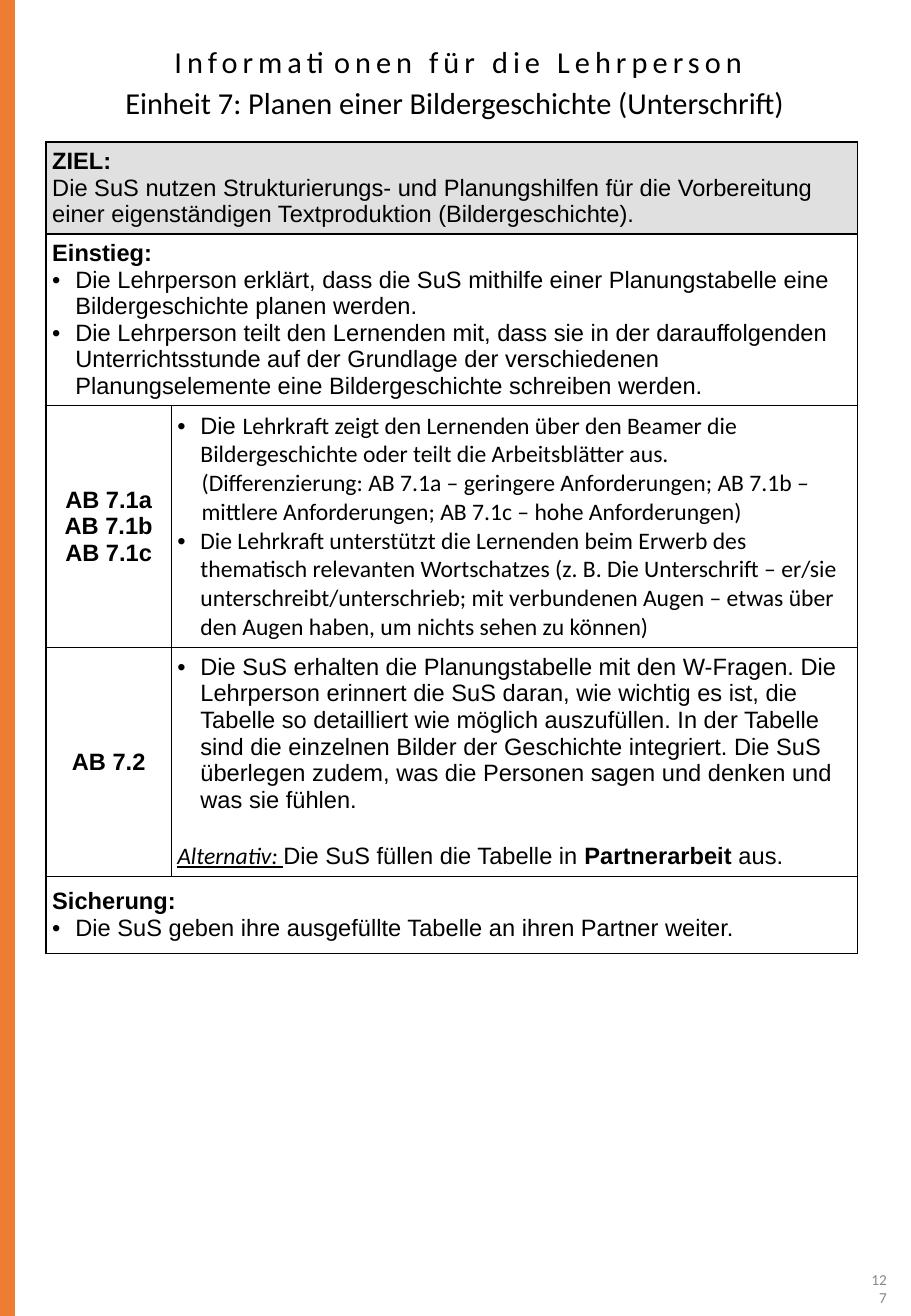
from lxml.etree import SubElement
from pptx import Presentation
from pptx.dml.color import RGBColor
from pptx.enum.text import MSO_ANCHOR as Anchor, PP_ALIGN as Align
from pptx.oxml.ns import qn
from pptx.util import Inches, Pt

BLACK = RGBColor(0x00, 0x00, 0x00)
WHITE = RGBColor(0xFF, 0xFF, 0xFF)
GOAL_GREY = RGBColor(0xE0, 0xE0, 0xE0)
NUMBER_GREY = RGBColor(0x88, 0x88, 0x88)
ORANGE = RGBColor(0xED, 0x7D, 0x31)
INSET = Inches(0.05)

prs = Presentation()
prs.slide_width, prs.slide_height = Inches(7.5), Inches(10.83)
slide = prs.slides.add_slide(prs.slide_layouts[6])


def add_label(text, left, top, width, height, size, color, align):
    frame = slide.shapes.add_textbox(
        Inches(left), Inches(top), Inches(width), Inches(height)).text_frame
    frame.word_wrap = True
    frame.margin_left = frame.margin_right = INSET
    frame.margin_top = frame.margin_bottom = INSET
    paragraph = frame.paragraphs[0]
    paragraph.text = text
    paragraph.alignment = align
    paragraph.font.name = "Calibri"
    paragraph.font.size = Pt(size)
    paragraph.font.color.rgb = color
    return frame


def fill_cell(cell, items, color=WHITE):
    """Each item is (kind, text, font); a text may be a list of (text, run font)."""
    cell.fill.solid()
    cell.fill.fore_color.rgb = color
    cell.vertical_anchor = Anchor.MIDDLE
    cell.margin_left = cell.margin_right = INSET
    cell.margin_top = cell.margin_bottom = INSET
    frame = cell.text_frame
    for number, (kind, text, font_name) in enumerate(items):
        paragraph = frame.add_paragraph() if number else frame.paragraphs[0]
        paragraph.font.name = font_name
        paragraph.font.size = Pt(14)
        paragraph.font.color.rgb = BLACK
        paragraph.font.bold = kind in ("heading", "sheet")
        if kind == "sheet":
            paragraph.alignment = Align.CENTER
        pPr = paragraph._p.get_or_add_pPr()
        if kind == "bullet":
            pPr.set("marL", str(Inches(0.19)))
            pPr.set("indent", str(-Inches(0.19)))
            bullet_font = pPr.makeelement(qn("a:buFont"), {"typeface": "Arial"})
            bullet_char = pPr.makeelement(qn("a:buChar"), {"char": "•"})
            pPr.insert(0, bullet_font)
            pPr.insert(1, bullet_char)
        elif kind == "indented":
            pPr.set("marL", str(Inches(0.2)))
        elif kind == "spaced":
            paragraph.space_before = Pt(17)
        parts = [(text, {})] if isinstance(text, str) else text
        for part, style in parts:
            run = paragraph.add_run()
            run.text = part
            for attribute, value in style.items():
                setattr(run.font, attribute, value)


# Lesson table
row_heights = [0.75, 1.41, 1.99, 1.88, 0.63]
lesson = slide.shapes.add_table(
    len(row_heights), 2, Inches(0.38), Inches(1.17),
    Inches(6.68), Inches(sum(row_heights))).table
lesson.first_row = lesson.horz_banding = False
for column, width in zip(lesson.columns, [1.03, 5.65]):
    column.width = Inches(width)
for row, height in zip(lesson.rows, row_heights):
    row.height = Inches(height)
for full_width_row in (0, 1, 4):
    lesson.cell(full_width_row, 0).merge(lesson.cell(full_width_row, 1))

# Cell borders
for cell in lesson.iter_cells():
    tcPr = cell._tc.get_or_add_tcPr()
    for side in ("a:lnL", "a:lnR", "a:lnT", "a:lnB"):
        border = SubElement(tcPr, qn(side), w=str(Pt(1)))
        border_fill = SubElement(border, qn("a:solidFill"))
        SubElement(border_fill, qn("a:srgbClr"), val=str(BLACK))

# Goal
fill_cell(lesson.cell(0, 0), [
    ("heading", "ZIEL:", "Arial"),
    ("plain", "Die SuS nutzen Strukturierungs- und Planungshilfen für die "
     "Vorbereitung einer eigenständigen Textproduktion (Bildergeschichte).", "Arial"),
], GOAL_GREY)

# Introduction
fill_cell(lesson.cell(1, 0), [
    ("heading", "Einstieg:", "Arial"),
    ("bullet", "Die Lehrperson erklärt, dass die SuS mithilfe einer "
     "Planungstabelle eine Bildergeschichte planen werden.", "Arial"),
    ("bullet", "Die Lehrperson teilt den Lernenden mit, dass sie in der "
     "darauffolgenden Unterrichtsstunde auf der Grundlage der verschiedenen "
     "Planungselemente eine Bildergeschichte schreiben werden.", "Arial"),
])

# Worksheets 7.1
fill_cell(lesson.cell(2, 0), [
    ("sheet", f"AB 7.1{version}", "Arial") for version in "abc"])
fill_cell(lesson.cell(2, 1), [
    ("bullet", [
        ("Die ", {"name": "Arial"}),
        ("Lehrkraft zeigt den Lernenden über den Beamer die "
         "Bildergeschichte oder teilt die Arbeitsblätter aus.", {}),
    ], "Calibri"),
    ("indented", "(Differenzierung: AB 7.1a – geringere Anforderungen; "
     "AB 7.1b – mittlere Anforderungen; AB 7.1c – hohe Anforderungen)", "Calibri"),
    ("bullet", "Die Lehrkraft unterstützt die Lernenden beim Erwerb des "
     "thematisch relevanten Wortschatzes (z. B. Die Unterschrift – er/sie "
     "unterschreibt/unterschrieb; mit verbundenen Augen – etwas über den "
     "Augen haben, um nichts sehen zu können)", "Calibri"),
])

# Worksheet 7.2
fill_cell(lesson.cell(3, 0), [("sheet", "AB 7.2", "Arial")])
fill_cell(lesson.cell(3, 1), [
    ("bullet", "Die SuS erhalten die Planungstabelle mit den W-Fragen. Die "
     "Lehrperson erinnert die SuS daran, wie wichtig es ist, die Tabelle so "
     "detailliert wie möglich auszufüllen. In der Tabelle sind die einzelnen "
     "Bilder der Geschichte integriert. Die SuS überlegen zudem, was die "
     "Personen sagen und denken und was sie fühlen.", "Arial"),
    ("spaced", [
        ("Alternativ: ", {"name": "Calibri", "italic": True, "underline": True}),
        ("Die SuS füllen die Tabelle in ", {}),
        ("Partnerarbeit", {"bold": True}),
        (" aus.", {}),
    ], "Arial"),
])

# Consolidation
fill_cell(lesson.cell(4, 0), [
    ("heading", "Sicherung:", "Arial"),
    ("bullet", "Die SuS geben ihre ausgefüllte Tabelle an ihren Partner weiter.",
     "Arial"),
])

# Titles
add_label("Einheit 7: Planen einer Bildergeschichte (Unterschrift)",
          0.14, 0.64, 7.21, 0.4, 18, BLACK, Align.CENTER)
heading = add_label("Informationen für die Lehrperson",
                    0.17, 0.31, 7.21, 0.4, 18, BLACK, Align.CENTER)
heading.paragraphs[0].runs[0]._r.get_or_add_rPr().set("spc", "300")

# Page number
page_number = add_label("127", 7.11, 10.48, 0.24, 0.25, 9, NUMBER_GREY, Align.RIGHT)
page_number.vertical_anchor = Anchor.MIDDLE

# Orange edge
edge = slide.shapes.add_connector(1, Inches(0.05), 0, Inches(0.05), prs.slide_height)
edge.line.color.rgb = ORANGE
edge.line.width = Pt(10)
SubElement(edge._element.spPr, qn("a:effectLst"))

# The fill must follow the borders in each cell's properties
for cell in lesson.iter_cells():
    tcPr = cell._tc.get_or_add_tcPr()
    for cell_fill in tcPr.findall(qn("a:solidFill")):
        tcPr.append(cell_fill)

prs.save("out.pptx")
